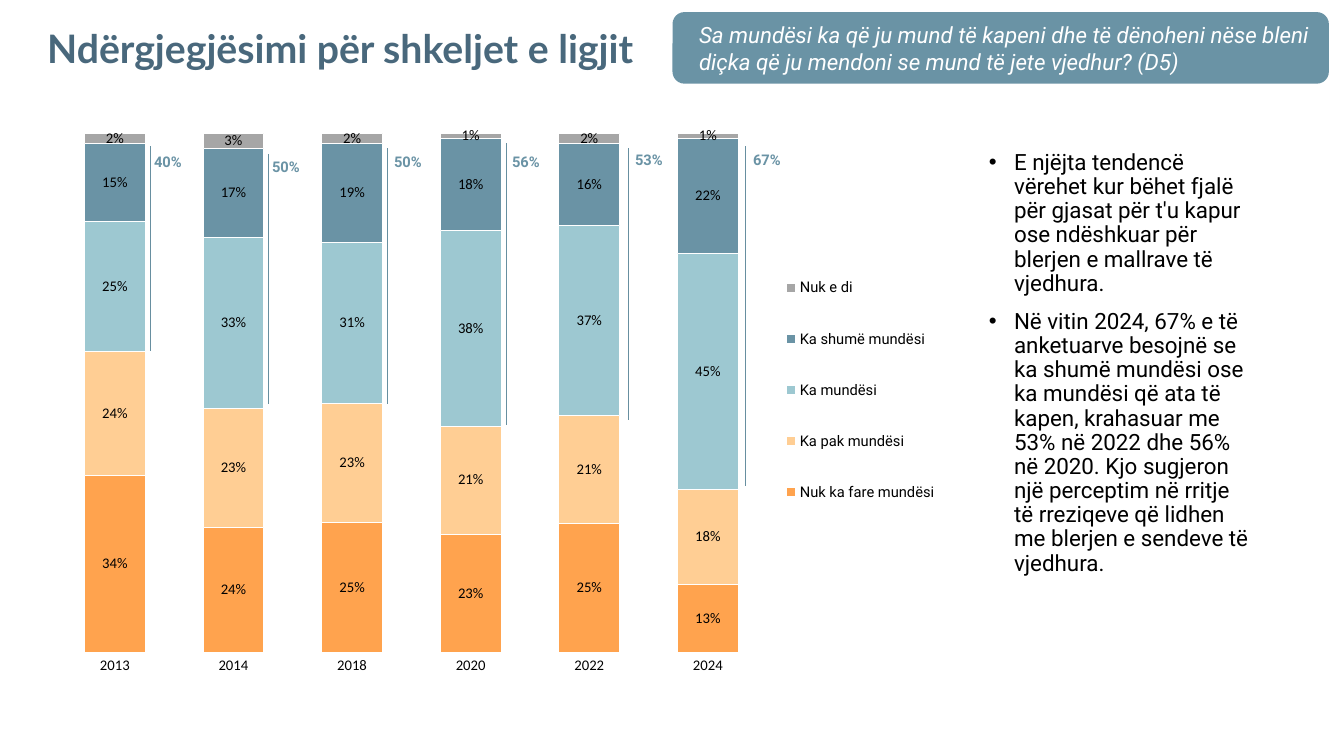
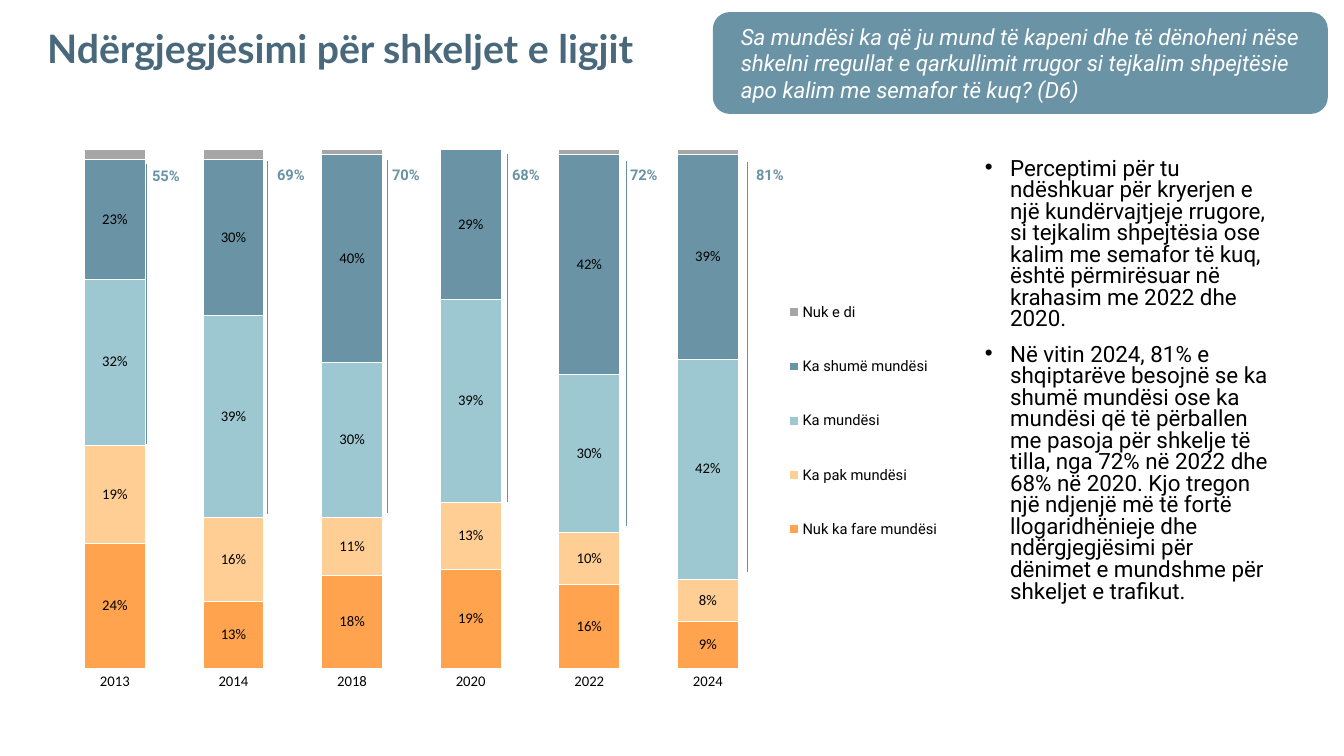
from lxml import etree
from pptx import Presentation
from pptx.chart.data import CategoryChartData
from pptx.dml.color import RGBColor
from pptx.enum.chart import XL_CHART_TYPE, XL_LEGEND_POSITION, XL_TICK_MARK
from pptx.enum.shapes import MSO_CONNECTOR, MSO_SHAPE
from pptx.enum.text import MSO_ANCHOR, PP_ALIGN
from pptx.oxml import parse_xml
from pptx.oxml.ns import nsdecls, qn
from pptx.util import Inches, Pt

STACKED = XL_CHART_TYPE.COLUMN_STACKED_100
LEGEND_RIGHT = XL_LEGEND_POSITION.RIGHT
NO_TICKS = XL_TICK_MARK.NONE
STRAIGHT = MSO_CONNECTOR.STRAIGHT
ROUNDED = MSO_SHAPE.ROUNDED_RECTANGLE
MIDDLE = MSO_ANCHOR.MIDDLE
LEFT = PP_ALIGN.LEFT

COLORS = {
    "title": "49687C",
    "accent": "6A93A5",
    "bracket": "678FA0",
    "text": "000000",
    "white": "FFFFFF",
}
TITLE = "Ndërgjegjësimi për shkeljet e ligjit"
YEARS = ["2013", "2014", "2018", "2020", "2022", "2024"]
ANSWERS = {
    "Nuk ka fare mundësi": "FFA34E",
    "Ka pak mundësi": "FFCE94",
    "Ka mundësi": "9DC8D1",
    "Ka shumë mundësi": "6A93A5",
    "Nuk e di": "A6A6A6",
}
SMALL = 10.5

# Totals: share, label left, label top, bracket x, bracket top, bracket bottom.
SLIDES = [
    {
        "question": "Sa mundësi ka që ju mund të kapeni dhe të dënoheni nëse bleni "
                    "diçka që ju mendoni se mund të jete vjedhur? (D5)",
        "question_box": (6.67, 0.12, 6.51, 0.71),
        "findings": [
            "E njëjta tendencë vërehet kur bëhet fjalë për gjasat për t'u kapur ose "
            "ndëshkuar për blerjen e mallrave të vjedhura.",
            "Në vitin 2024, 67% e të anketuarve besojnë se ka shumë mundësi ose ka "
            "mundësi që ata të kapen, krahasuar me 53% në 2022 dhe 56% në 2020. Kjo "
            "sugjeron një perceptim në rritje të rreziqeve që lidhen me blerjen e "
            "sendeve të vjedhura.",
        ],
        "findings_box": (9.71, 1.45, 2.77, 4.34),
        "line_spacing": 0.9,
        "chart_top": 1.21,
        "legend": (0.815, 0.218, 0.175, 0.514),
        "label_unknown": True,
        "shares": [
            (0.34, 0.24, 0.25, 0.23, 0.25, 0.13),
            (0.24, 0.23, 0.23, 0.21, 0.21, 0.18),
            (0.25, 0.33, 0.31, 0.38, 0.37, 0.45),
            (0.15, 0.17, 0.19, 0.18, 0.16, 0.22),
            (0.02, 0.03, 0.02, 0.01, 0.02, 0.01),
        ],
        "totals": [
            ("40%", 1.43, 1.47, 1.49, 1.45, 3.48),
            ("50%", 2.6, 1.52, 2.66, 1.53, 4.01),
            ("50%", 3.81, 1.47, 3.84, 1.47, 4.01),
            ("56%", 4.98, 1.47, 5.02, 1.42, 4.22),
            ("53%", 6.2, 1.45, 6.23, 1.47, 4.17),
            ("67%", 7.37, 1.45, 7.39, 1.45, 4.82),
        ],
    },
    {
        "question": "Sa mundësi ka që ju mund të kapeni dhe të dënoheni nëse shkelni "
                    "rregullat e qarkullimit rrugor si tejkalim shpejtësie apo kalim "
                    "me semafor të kuq? (D6)",
        "question_box": (7.07, 0.12, 6.1, 1.01),
        "findings": [
            "Perceptimi për tu ndëshkuar për kryerjen e një kundërvajtjeje rrugore, si "
            "tejkalim shpejtësia ose kalim me semafor të kuq, është përmirësuar në "
            "krahasim me 2022 dhe 2020.",
            "Në vitin 2024, 81% e shqiptarëve besojnë se ka shumë mundësi ose ka "
            "mundësi që të përballen me pasoja për shkelje të tilla, nga 72% në 2022 "
            "dhe 68% në 2020. Kjo tregon një ndjenjë më të fortë llogaridhënieje dhe "
            "ndërgjegjësimi për dënimet e mundshme për shkeljet e trafikut.",
        ],
        "findings_box": (9.67, 1.53, 3.09, 4.66),
        "line_spacing": 0.8,
        "chart_top": 1.37,
        "legend": (0.818, 0.227, 0.175, 0.548),
        "label_unknown": False,
        "shares": [
            (0.24, 0.13, 0.18, 0.19, 0.16, 0.09),
            (0.19, 0.16, 0.11, 0.13, 0.1, 0.08),
            (0.32, 0.39, 0.3, 0.39, 0.3, 0.42),
            (0.23, 0.3, 0.4, 0.29, 0.42, 0.39),
            (0.02, 0.02, 0.01, 0, 0.01, 0.01),
        ],
        "totals": [
            ("55%", 1.41, 1.61, 1.45, 1.63, 4.4),
            ("69%", 2.65, 1.6, 2.65, 1.6, 5.1),
            ("70%", 3.79, 1.6, 3.84, 1.59, 5.09),
            ("68%", 4.98, 1.6, 5.03, 1.53, 4.98),
            ("72%", 6.15, 1.6, 6.21, 1.6, 5.22),
            ("81%", 7.4, 1.6, 7.41, 1.61, 5.67),
        ],
    },
]


def rgb(name):
    return RGBColor.from_string(COLORS[name])


def inches(box):
    return [Inches(length) for length in box]


def style_font(font, size, family, color="text", bold=False, italic=False):
    font.size = Pt(size)
    font.name = family
    font.color.rgb = rgb(color)
    font.bold = bold
    font.italic = italic


def add_run(paragraph, text, *style, **emphasis):
    run = paragraph.add_run()
    run.text = text
    style_font(run.font, *style, **emphasis)


def add_text_frame(slide, box):
    frame = slide.shapes.add_textbox(*inches(box)).text_frame
    frame.word_wrap = True
    return frame


def add_title(slide):
    frame = add_text_frame(slide, (0.37, 0.11, 6.7, 0.78))
    frame.vertical_anchor = MIDDLE
    paragraph = frame.paragraphs[0]
    paragraph.line_spacing = 0.9
    add_run(paragraph, TITLE, 28, "Lato", "title", bold=True)


def add_question(slide, question, box):
    banner = slide.shapes.add_shape(ROUNDED, *inches(box))
    banner.shadow.inherit = False
    banner.fill.solid()
    banner.fill.fore_color.rgb = rgb("accent")
    banner.line.fill.background()
    frame = banner.text_frame
    frame.word_wrap = True
    frame.vertical_anchor = MIDDLE
    paragraph = frame.paragraphs[0]
    paragraph.alignment = LEFT
    paragraph._p.get_or_add_pPr().set("marL", str(Inches(0.13)))
    add_run(paragraph, question, 16, "Roboto", "white", italic=True)


def add_findings(slide, findings, box, line_spacing):
    frame = add_text_frame(slide, box)
    for index, finding in enumerate(findings):
        paragraph = frame.add_paragraph() if index else frame.paragraphs[0]
        paragraph.line_spacing = line_spacing
        paragraph.space_before = Pt(10)
        properties = paragraph._p.get_or_add_pPr()
        properties.set("marL", str(Inches(0.25)))
        properties.set("indent", str(-Inches(0.25)))
        etree.SubElement(properties, qn("a:buFont")).set("typeface", "Arial")
        etree.SubElement(properties, qn("a:buChar")).set("char", "•")
        add_run(paragraph, finding, 16, "Roboto")


def layout_xml(box, inner=False):
    """Manual chart layout from fractions of the chart's size."""
    target = '<c:layoutTarget val="inner"/>' if inner else ""
    modes = '<c:xMode val="edge"/><c:yMode val="edge"/>'
    sizes = "".join(f'<c:{key} val="{value}"/>' for key, value in zip("xywh", box))
    return parse_xml(f'<c:layout {nsdecls("c")}><c:manualLayout>{target}{modes}{sizes}'
                     "</c:manualLayout></c:layout>")


def place_plot(chart, box):
    area = chart._chartSpace.chart.plotArea
    for layout in area.findall(qn("c:layout")):
        area.remove(layout)
    area.insert(0, layout_xml(box, inner=True))


def place_legend(chart, box):
    chart.has_legend = True
    legend = chart.legend
    legend.position = LEGEND_RIGHT
    legend.include_in_layout = False
    style_font(legend.font, SMALL, "Roboto")
    element = legend._element
    for layout in element.findall(qn("c:layout")):
        element.remove(layout)
    element.find(qn("c:legendPos")).addnext(layout_xml(box))


def style_series(series, color, labelled):
    series.format.fill.solid()
    series.format.fill.fore_color.rgb = RGBColor.from_string(color)
    series.format.line.color.rgb = rgb("white")
    series.format.line.width = Pt(0.75)
    if labelled:
        labels = series.data_labels
        labels.show_value = True
        labels.number_format = "0%"
        labels.number_format_is_linked = False
        style_font(labels.font, SMALL, "Calibri")


def add_answers_chart(slide, content):
    data = CategoryChartData(number_format="0%")
    data.categories = YEARS
    for answer, shares in zip(ANSWERS, content["shares"]):
        data.add_series(answer, shares)
    box = (0.37, content["chart_top"], 9.05, 5.6)
    chart = slide.shapes.add_chart(STACKED, *inches(box), data).chart
    chart.has_title = False
    style_font(chart.font, SMALL, "Calibri")

    plot = chart.plots[0]
    plot.gap_width = 95
    plot.overlap = 100
    plot.vary_by_categories = False
    for series in plot.series:
        labelled = series.name != "Nuk e di" or content["label_unknown"]
        style_series(series, ANSWERS[series.name], labelled)

    years = chart.category_axis
    years.major_tick_mark = NO_TICKS
    years.format.line.fill.background()
    style_font(years.tick_labels.font, SMALL, "Calibri")
    chart.value_axis.visible = False
    chart.value_axis.has_major_gridlines = False
    place_plot(chart, (0.02, 0.02, 0.78, 0.92))
    place_legend(chart, content["legend"])


def add_bracket(slide, x, top, bottom):
    bracket = slide.shapes.add_connector(STRAIGHT, *inches((x, top, x, bottom)))
    bracket.line.color.rgb = rgb("bracket")
    bracket.line.width = Pt(0.5)
    etree.SubElement(bracket._element.spPr, qn("a:effectLst"))


def add_total(slide, share, left, top):
    frame = add_text_frame(slide, (left, top, 0.62, 0.29))
    add_run(frame.paragraphs[0], share, SMALL, "Roboto", "accent", bold=True)


def add_survey_slide(deck, content):
    slide = deck.slides.add_slide(deck.slide_layouts[6])
    add_title(slide)
    add_findings(slide, content["findings"], content["findings_box"],
                 content["line_spacing"])
    add_question(slide, content["question"], content["question_box"])
    add_answers_chart(slide, content)
    for share, left, label_top, x, top, bottom in content["totals"]:
        add_bracket(slide, x, top, bottom)
        add_total(slide, share, left, label_top)


def main():
    deck = Presentation()
    deck.slide_width, deck.slide_height = Inches(13.33), Inches(7.5)
    for content in SLIDES:
        add_survey_slide(deck, content)
    deck.save("out.pptx")


if __name__ == "__main__":
    main()
